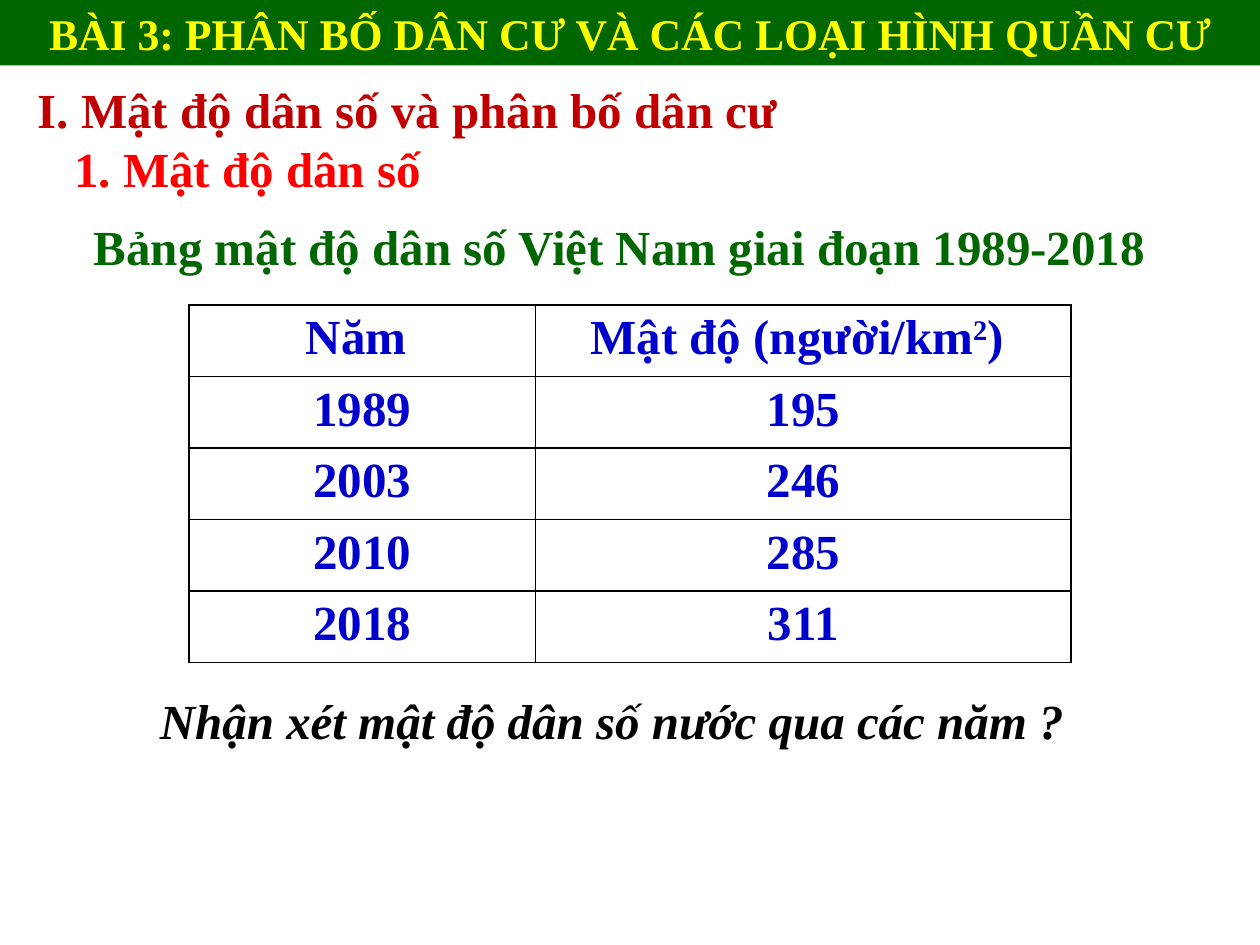
from lxml import etree
from pptx import Presentation
from pptx.dml.color import RGBColor
from pptx.enum.text import MSO_ANCHOR, MSO_AUTO_SIZE, PP_ALIGN
from pptx.oxml.ns import qn
from pptx.util import Inches, Pt

COLORS = {"green": "006600", "yellow": "FFFF00", "dark_red": "C00000",
          "red": "FF0000", "blue": "0000CC", "black": "000000"}


def format_text(p, color, size=28, align=PP_ALIGN.LEFT, italic=False):
    p.alignment = align
    for r in p.runs:
        r.font.name = "Times New Roman"
        r.font.size = Pt(size)
        r.font.bold = True
        r.font.italic = italic
        r.font.color.rgb = RGBColor.from_string(COLORS[color])


def add_borders(cell):
    tcPr = cell._tc.get_or_add_tcPr()
    for side in ("lnL", "lnR", "lnT", "lnB"):
        ln = etree.SubElement(tcPr, qn(f"a:{side}"), w=str(Pt(1)))
        fill = etree.SubElement(ln, qn("a:solidFill"))
        etree.SubElement(fill, qn("a:srgbClr"), val=COLORS["black"])


prs = Presentation()
prs.slide_width, prs.slide_height = Inches(10), Inches(7.5)
s = prs.slides.add_slide(prs.slide_layouts[5])

# Lesson title banner
title = s.shapes.title
title.left, title.top = Inches(0), Inches(0)
title.width, title.height = Inches(10), Inches(0.52)
title.fill.solid()
title.fill.fore_color.rgb = RGBColor.from_string(COLORS["green"])
tf = title.text_frame
tf.text = "BÀI 3: PHÂN BỐ DÂN CƯ VÀ CÁC LOẠI HÌNH QUẦN CƯ"
tf.auto_size = MSO_AUTO_SIZE.NONE
tf.vertical_anchor = MSO_ANCHOR.MIDDLE
format_text(tf.paragraphs[0], "yellow", size=25, align=PP_ALIGN.CENTER)

# Section headings
headings = s.shapes.add_textbox(Inches(0.2), Inches(0.58), Inches(6.14), Inches(1.04))
tf = headings.text_frame
tf.text = "I. Mật độ dân số và phân bố dân cư"
format_text(tf.paragraphs[0], "dark_red")
p = tf.add_paragraph()
p.text = "1. Mật độ dân số"
format_text(p, "red")
p._p.get_or_add_pPr().set("marL", str(Inches(0.29)))

# Table caption and question
captions = [
    ("Bảng mật độ dân số Việt Nam giai đoạn 1989-2018",
     0, 1.67, 9.83, "green", PP_ALIGN.CENTER, False),
    ("Nhận xét mật độ dân số nước qua các năm ?",
     1.17, 5.43, 8, "black", PP_ALIGN.LEFT, True),
]
for text, left, top, width, color, align, italic in captions:
    box = s.shapes.add_textbox(Inches(left), Inches(top), Inches(width), Inches(0.57))
    tf = box.text_frame
    tf.word_wrap = True
    tf.text = text
    format_text(tf.paragraphs[0], color, align=align, italic=italic)

# Population density table
rows = [("Năm ", "Mật độ (người/km"), ("1989", "195"), ("2003", "246"),
        ("2010", "285"), ("2018", "311")]
table = s.shapes.add_table(len(rows), 2, Inches(1.5), Inches(2.42),
                           Inches(7), Inches(2.83)).table
table.columns[0].width, table.columns[1].width = Inches(2.75), Inches(4.25)
for i, row in enumerate(rows):
    for j, text in enumerate(row):
        cell = table.cell(i, j)
        cell.text = text
        p = cell.text_frame.paragraphs[0]
        if (i, j) == (0, 1):
            squared = p.add_run()
            squared.text = "2"
            squared.font._element.set("baseline", "30000")
            p.add_run().text = ") "
        format_text(p, "blue", align=PP_ALIGN.CENTER)
        add_borders(cell)
        cell.fill.background()

prs.save("out.pptx")
